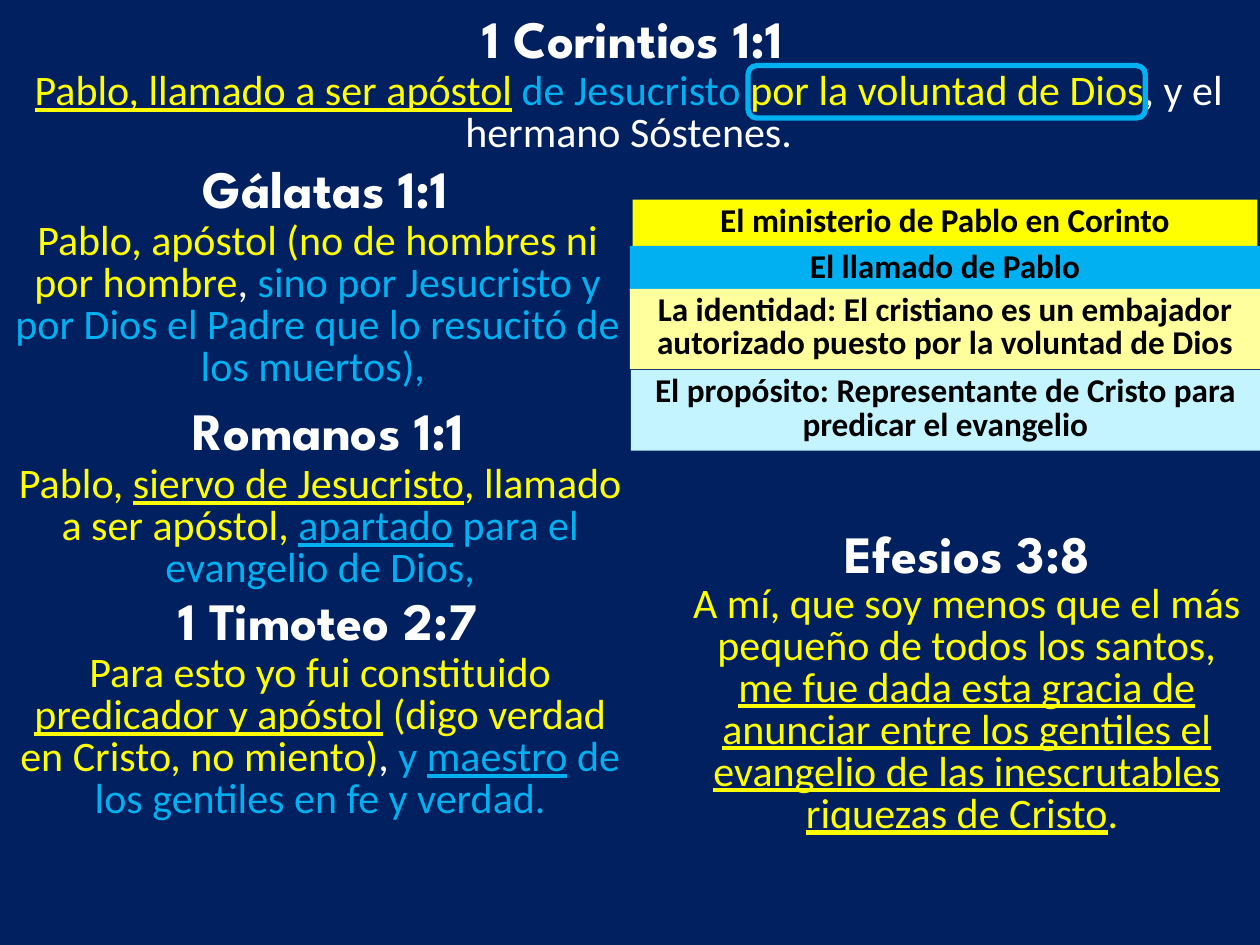
import pptx
import pptx.dml.color
import pptx.enum.shapes
import pptx.enum.text
import pptx.util

Pt = pptx.util.Pt
RGBColor = pptx.dml.color.RGBColor

NAVY = RGBColor(0x00, 0x20, 0x60)
WHITE = RGBColor(0xFF, 0xFF, 0xFF)
BLACK = RGBColor(0x00, 0x00, 0x00)
YELLOW = RGBColor(0xFF, 0xFF, 0x00)
BLUE = RGBColor(0x00, 0xB0, 0xF0)
PALE_YELLOW = RGBColor(0xFF, 0xFF, 0x9E)
PALE_BLUE = RGBColor(0xC3, 0xF4, 0xFF)

HEADING = {"name": "League Spartan", "size": Pt(30), "bold": True}
VERSE = {"name": "Calibri", "size": Pt(24)}
POINT = {"name": "Calibri", "size": Pt(19), "bold": True}

# Each passage: heading, heading frame, verse frame, spans (text, colour, underlined).
# Frames are left, top, width, height in points.
PASSAGES = [
    (" 1 Corintios 1:1", (190, 0, 335, 44), (0, 37.5, 718.5, 56), [
        ("Pablo, llamado a ser apóstol", YELLOW, True),
        (" ", YELLOW, False),
        ("de Jesucristo", BLUE, False),
        (" por la voluntad de Dios", YELLOW, False),
        (", y el hermano Sóstenes.", WHITE, False),
    ]),
    (" Gálatas 1:1", (14.5, 85.5, 335, 44), (1.5, 123, 360, 104.5), [
        ("Pablo, apóstol (no de hombres ni por hombre", YELLOW, False),
        (", ", WHITE, False),
        ("sino por Jesucristo y por Dios el Padre que lo resucitó de los muertos), ",
         BLUE, False),
    ]),
    (" Romanos 1:1", (16, 224, 335, 44), (3, 262, 360, 80.5), [
        ("Pablo, ", YELLOW, False),
        ("siervo de Jesucristo", YELLOW, True),
        (", llamado a ser apóstol, ", YELLOW, False),
        ("apartado", BLUE, True),
        (" para el evangelio de Dios,", BLUE, False),
    ]),
    (" 1 Timoteo 2:7", (16, 332.5, 335, 44), (3, 370, 360, 104.5), [
        ("Para esto yo fui constituido ", YELLOW, False),
        ("predicador y apóstol", YELLOW, True),
        (" (digo verdad en Cristo, no miento)", YELLOW, False),
        (", ", WHITE, False),
        ("y ", BLUE, False),
        ("maestro", BLUE, True),
        (" de los gentiles en fe y verdad.", BLUE, False),
    ]),
    (" Efesios 3:8", (394, 294.5, 309.5, 44), (385, 330.5, 335, 153.5), [
        ("A mí, que soy menos que el más pequeño de todos los santos, ", YELLOW, False),
        ("me fue dada esta gracia de anunciar entre los gentiles el evangelio "
         "de las inescrutables riquezas de Cristo", YELLOW, True),
        (". ", YELLOW, False),
    ]),
]

POINTS = [
    ("El ministerio de Pablo en Corinto", (361.5, 114, 357, 26.5), YELLOW),
    ("El llamado de Pablo", (360, 140.5, 360, 26.5), BLUE),
    ("La identidad: El cristiano es un embajador autorizado puesto por la voluntad de Dios",
     (360, 165, 360, 46), PALE_YELLOW),
    ("El propósito: Representante de Cristo para predicar el evangelio",
     (360.5, 211.5, 359.5, 46), PALE_BLUE),
]

HIGHLIGHT_FRAME = (427.5, 37.5, 227, 30)


def in_points(frame):
    return [Pt(length) for length in frame]


def write_spans(box, spans, style, line_spacing=None):
    """Fill a box with one centred paragraph of coloured spans."""
    box.text_frame.word_wrap = True
    para = box.text_frame.paragraphs[0]
    para.alignment = pptx.enum.text.PP_ALIGN.CENTER
    para.line_spacing = line_spacing
    for text, colour, underlined in spans:
        span = para.add_run()
        span.text = text
        for name, value in {**style, "underline": underlined}.items():
            setattr(span.font, name, value)
        span.font.color.rgb = colour


def add_passage(page, heading, heading_frame, verse_frame, spans):
    heading_box = page.shapes.add_textbox(*in_points(heading_frame))
    write_spans(heading_box, [(heading, WHITE, False)], HEADING)
    verse_box = page.shapes.add_textbox(*in_points(verse_frame))
    write_spans(verse_box, spans, VERSE, VERSE["size"])


def add_point(page, text, frame, fill):
    bar = page.shapes.add_shape(
        pptx.enum.shapes.MSO_SHAPE.RECTANGLE, *in_points(frame))
    bar.shadow.inherit = False
    bar.fill.solid()
    bar.fill.fore_color.rgb = fill
    bar.line.fill.background()
    bar.text_frame.vertical_anchor = pptx.enum.text.MSO_ANCHOR.TOP
    write_spans(bar, [(text, BLACK, False)], POINT, POINT["size"])


def add_highlight(page, frame):
    outline = page.shapes.add_shape(
        pptx.enum.shapes.MSO_SHAPE.ROUNDED_RECTANGLE, *in_points(frame))
    outline.shadow.inherit = False
    outline.fill.background()
    outline.line.color.rgb = BLUE
    outline.line.width = Pt(3)


def main():
    deck = pptx.Presentation()
    deck.slide_width, deck.slide_height = Pt(720), Pt(540)
    page = deck.slides.add_slide(deck.slide_layouts[6])
    page.background.fill.solid()
    page.background.fill.fore_color.rgb = NAVY
    for passage in PASSAGES:
        add_passage(page, *passage)
    for point in POINTS:
        add_point(page, *point)
    add_highlight(page, HIGHLIGHT_FRAME)
    deck.save("out.pptx")


if __name__ == "__main__":
    main()
